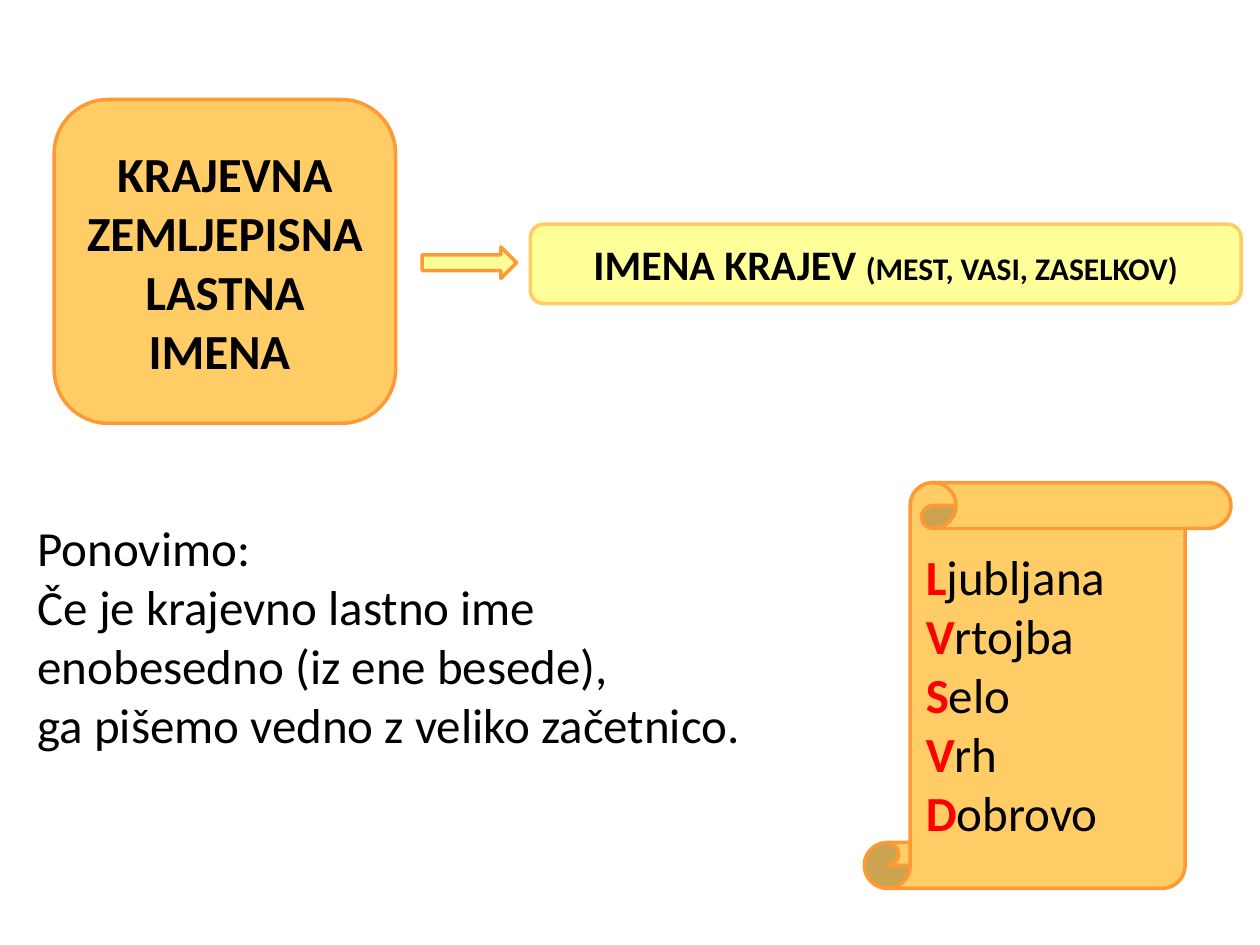
import pptx
import pptx.util
import pptx.dml.color
import pptx.enum.shapes
import pptx.enum.text

Inches = pptx.util.Inches
Pt = pptx.util.Pt
RGBColor = pptx.dml.color.RGBColor
Kind = pptx.enum.shapes.MSO_SHAPE
Align = pptx.enum.text.PP_ALIGN
Anchor = pptx.enum.text.MSO_ANCHOR

BLACK = RGBColor(0x00, 0x00, 0x00)
RED = RGBColor(0xFF, 0x00, 0x00)
GOLD = RGBColor(0xFF, 0xCC, 0x66)
AMBER = RGBColor(0xFF, 0x99, 0x33)
LEMON = RGBColor(0xFF, 0xFF, 0x99)


class Board:
    font = "Calibri"
    size = 28
    edge = 2

    def __init__(self, slide):
        self.slide = slide

    def style(self, run, size=None, bold=False, color=BLACK):
        run.font.name = self.font
        run.font.size = Pt(size or self.size)
        run.font.bold = bold
        run.font.color.rgb = color

    def shape(self, kind, box, fill, line):
        item = self.slide.shapes.add_shape(kind, *map(Inches, box))
        item.shadow.inherit = False
        item.fill.solid()
        item.fill.fore_color.rgb = fill
        item.line.color.rgb = line
        item.line.width = Pt(self.edge)
        return item

    def label(self, box, fill, line, parts):
        frame = self.shape(Kind.ROUNDED_RECTANGLE, box, fill, line).text_frame
        frame.word_wrap = True
        frame.vertical_anchor = Anchor.MIDDLE
        para = frame.paragraphs[0]
        para.alignment = Align.CENTER
        for text, size in parts:
            run = para.add_run()
            run.text = text
            self.style(run, size, bold=True)

    def text(self, box, lines):
        frame = self.slide.shapes.add_textbox(*map(Inches, box)).text_frame
        frame.word_wrap = True
        frame.text = "\n".join(lines)
        for para in frame.paragraphs:
            for run in para.runs:
                self.style(run)
        return frame

    def names(self, box, words):
        frame = self.text(box, [word[0] for word in words])
        for para, word in zip(frame.paragraphs, words):
            self.style(para.runs[0], bold=True, color=RED)
            rest = para.add_run()
            rest.text = word[1:]
            self.style(rest)


def main():
    deck = pptx.Presentation()
    deck.slide_width = Inches(10)
    deck.slide_height = Inches(7.5)
    board = Board(deck.slides.add_slide(deck.slide_layouts[6]))

    board.text((0.2, 4.06, 6.3, 2.46), [
        "Ponovimo:",
        "Če je krajevno lastno ime",
        "enobesedno (iz ene besede),",
        "ga pišemo vedno z veliko začetnico.",
    ])
    board.shape(Kind.VERTICAL_SCROLL, (6.86, 3.83, 2.91, 3.22), GOLD, AMBER)
    board.names((7.25, 4.29, 2.13, 2.76),
                ["Ljubljana", "Vrtojba", "Selo", "Vrh", "Dobrovo"])
    board.label((0.43, 0.79, 2.71, 2.57), GOLD, AMBER,
                [("KRAJEVNA ZEMLJEPISNA LASTNA IMENA ", 28)])
    board.label((4.21, 1.78, 5.64, 0.63), LEMON, GOLD,
                [("IMENA KRAJEV ", 24), ("(MEST, VASI, ZASELKOV)", 18)])
    board.shape(Kind.RIGHT_ARROW, (3.35, 1.96, 0.75, 0.25), LEMON, AMBER)

    deck.save("out.pptx")


if __name__ == "__main__":
    main()
